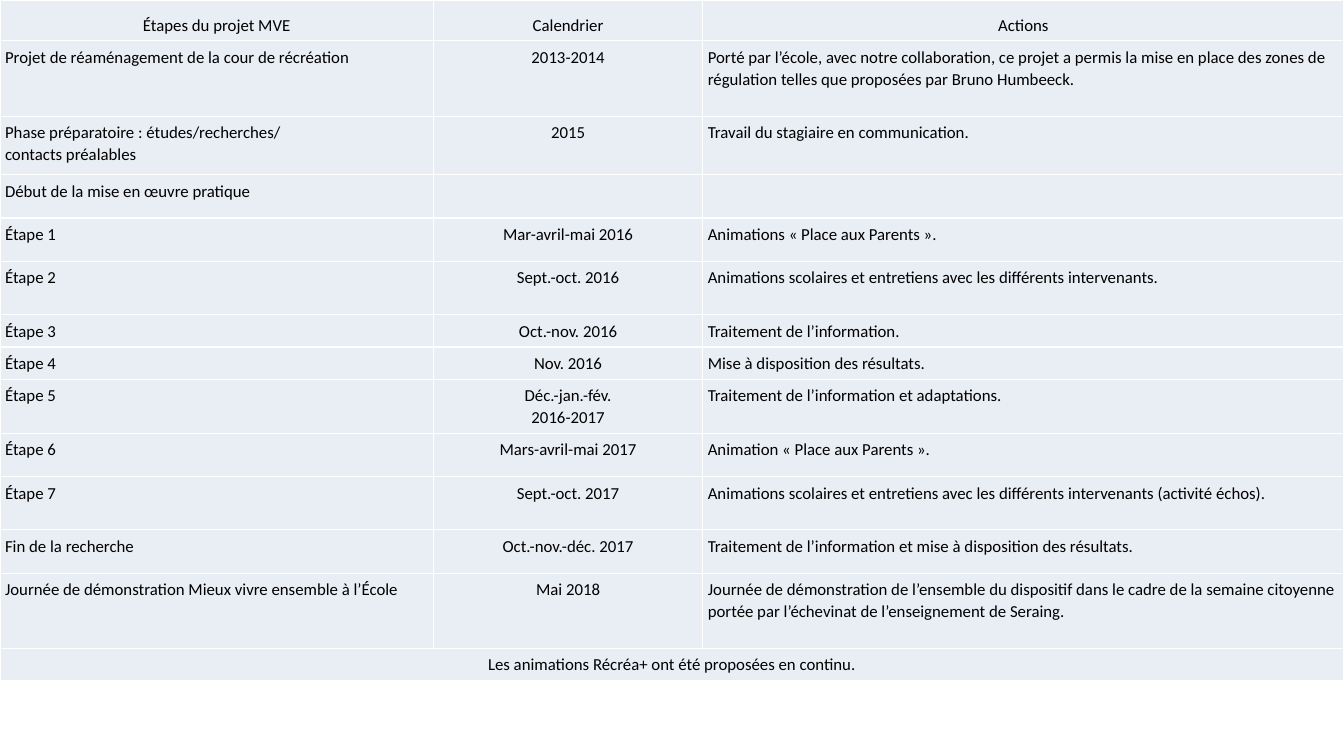
from typing import NamedTuple

import pptx
import pptx.dml.color
import pptx.enum.text
import pptx.oxml
import pptx.oxml.ns
import pptx.table
import pptx.util

Pt = pptx.util.Pt
ALIGN = pptx.enum.text.PP_ALIGN

FONT, SIZE, INSET = "Calibri", 12, 3.6
TEXT, FILL, BORDER = "000000", "E9EDF4", "FFFFFF"
COLUMN_WIDTHS = (309.6, 192.4, 458)
HEADER_SPACING, BODY_SPACING = 1.5, 1.07


class Step(NamedTuple):
    height: float
    name: str
    date: str = ""
    action: str = ""


HEADER = Step(29.2, "Étapes du projet MVE", "Calendrier", "Actions")
STEPS = (
    Step(53.8, "Projet de réaménagement de la cour de récréation", "2013-2014",
         "Porté par l’école, avec notre collaboration, ce projet a permis la mise en place "
         "des zones de régulation telles que proposées par Bruno Humbeeck."),
    Step(41.8, "Phase préparatoire : études/recherches/\ncontacts préalables", "2015",
         "Travail du stagiaire en communication."),
    Step(31, "Début de la mise en œuvre pratique"),
    Step(31, "Étape 1", "Mar-avril-mai 2016", "Animations « Place aux Parents »."),
    Step(38.2, "Étape 2", "Sept.-oct. 2016",
         "Animations scolaires et entretiens avec les différents intervenants."),
    Step(23, "Étape 3", "Oct.-nov. 2016", "Traitement de l’information."),
    Step(23, "Étape 4", "Nov. 2016", "Mise à disposition des résultats."),
    Step(38.8, "Étape 5", "Déc.-jan.-fév.\n2016-2017",
         "Traitement de l’information et adaptations."),
    Step(31, "Étape 6", "Mars-avril-mai 2017", "Animation « Place aux Parents »."),
    Step(37.8, "Étape 7", "Sept.-oct. 2017",
         "Animations scolaires et entretiens avec les différents intervenants (activité échos)."),
    Step(31, "Fin de la recherche", "Oct.-nov.-déc. 2017",
         "Traitement de l’information et mise à disposition des résultats."),
    Step(53.8, "Journée de démonstration Mieux vivre ensemble à l’École", "Mai 2018",
         "Journée de démonstration de l’ensemble du dispositif dans le cadre de la semaine "
         "citoyenne portée par l’échevinat de l’enseignement de Seraing."),
)
FOOTER = Step(23, "Les animations Récréa+ ont été proposées en continu.")


def rgb(color: str) -> pptx.dml.color.RGBColor:
    return pptx.dml.color.RGBColor.from_string(color)


def add_borders(cell: pptx.table._Cell) -> None:
    tc_pr = cell._tc.get_or_add_tcPr()
    for side in ("lnL", "lnR", "lnT", "lnB"):
        tc_pr.append(pptx.oxml.parse_xml(
            f'<a:{side} {pptx.oxml.ns.nsdecls("a")} w="{Pt(1)}"><a:solidFill>'
            f'<a:srgbClr val="{BORDER}"/></a:solidFill></a:{side}>'))


def style_cell(cell: pptx.table._Cell, text: str, align: ALIGN, spacing: float) -> None:
    add_borders(cell)
    cell.fill.solid()
    cell.fill.fore_color.rgb = rgb(FILL)
    cell.margin_left = cell.margin_right = Pt(INSET)
    cell.margin_top = cell.margin_bottom = Pt(INSET)
    p = cell.text_frame.paragraphs[0]
    p.text = text
    p.alignment = align
    p.line_spacing = spacing
    p.font.name = FONT
    p.font.size = Pt(SIZE)
    p.font.color.rgb = rgb(TEXT)


def add_schedule(slide: pptx.slide.Slide) -> None:
    rows = (HEADER, *STEPS, FOOTER)
    table = slide.shapes.add_table(
        len(rows), len(COLUMN_WIDTHS), Pt(0), Pt(0),
        Pt(sum(COLUMN_WIDTHS)), Pt(sum(row.height for row in rows))).table
    table.first_row = table.horz_banding = False
    for column, width in zip(table.columns, COLUMN_WIDTHS):
        column.width = Pt(width)
    for i, row in enumerate(rows):
        table.rows[i].height = Pt(row.height)
        titled = row in (HEADER, FOOTER)
        spacing = HEADER_SPACING if row is HEADER else BODY_SPACING
        for j, text in enumerate((row.name, row.date, row.action)):
            align = ALIGN.CENTER if titled or j == 1 else ALIGN.LEFT
            style_cell(table.cell(i, j), text, align, spacing)
    last = len(rows) - 1
    table.cell(last, 0).merge(table.cell(last, len(COLUMN_WIDTHS) - 1))


def main() -> None:
    prs = pptx.Presentation()
    prs.slide_width, prs.slide_height = Pt(960), Pt(540)
    add_schedule(prs.slides.add_slide(prs.slide_layouts[6]))
    prs.save("out.pptx")


if __name__ == "__main__":
    main()
